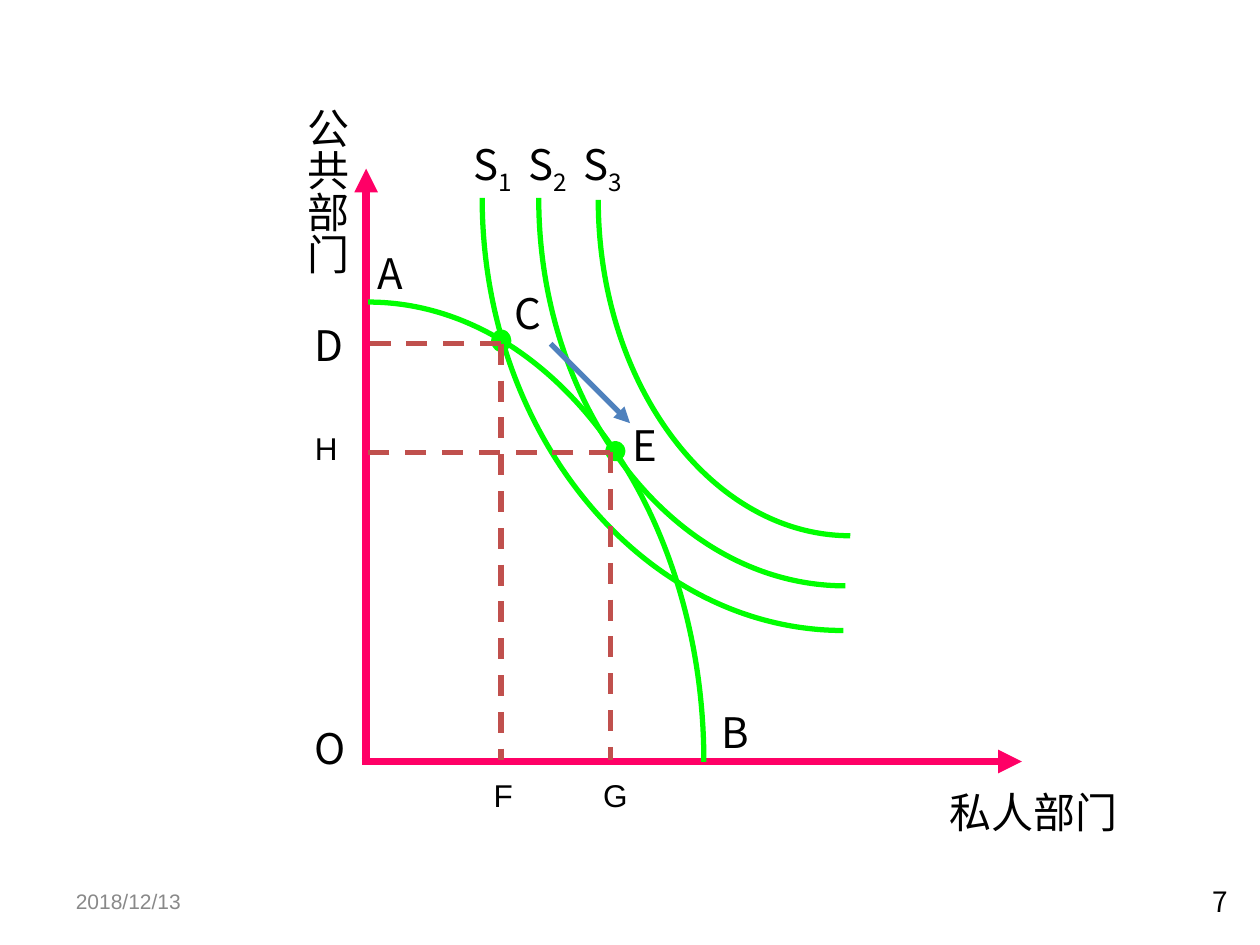
from lxml import etree
from pptx import Presentation
from pptx.dml.color import RGBColor
from pptx.enum.dml import MSO_LINE
from pptx.enum.shapes import MSO_CONNECTOR, MSO_SHAPE
from pptx.enum.text import MSO_ANCHOR, MSO_AUTO_SIZE, PP_ALIGN
from pptx.oxml.ns import qn
from pptx.util import Cm, Pt

DASH = MSO_LINE.DASH
STRAIGHT = MSO_CONNECTOR.STRAIGHT
OVAL = MSO_SHAPE.OVAL
MIDDLE = MSO_ANCHOR.MIDDLE
GROW = MSO_AUTO_SIZE.SHAPE_TO_FIT_TEXT
LEFT, RIGHT = PP_ALIGN.LEFT, PP_ALIGN.RIGHT

HUES = {"axis": "FF0066", "curve": "00FF00", "guide": "C0504D",
        "shift": "4F81BD", "text": "000000", "date": "898989"}
SANS, HAN = "Arial", "Noto Sans CJK SC"
BEND = 0.55


def color(name):
    return RGBColor.from_string(HUES[name])


def text(slide, words, x, y, w, h, size=24, font=HAN, hue="text", align=LEFT,
         wrap=False, grow=True, anchor=None, vert=None, tab=None):
    box = slide.shapes.add_textbox(Cm(x), Cm(y), Cm(w), Cm(h))
    frame = box.text_frame
    frame.word_wrap = wrap
    if grow:
        frame.auto_size = GROW
    if anchor is not None:
        frame.vertical_anchor = anchor
    if vert:
        frame._txBody.bodyPr.set("vert", vert)
    para = frame.paragraphs[0]
    para.alignment = align
    if tab:
        stops = etree.SubElement(para._p.get_or_add_pPr(), qn("a:tabLst"))
        for n in (1, 2):
            etree.SubElement(stops, qn("a:tab"), pos=str(Cm(tab * n)), algn="l")
    for n, part in enumerate(words.split("|")):
        run = para.add_run()
        run.text = part
        run.font.size = Pt(size)
        run.font.name = font
        run.font.color.rgb = color(hue)
        props = run._r.get_or_add_rPr()
        etree.SubElement(props, qn("a:ea"), typeface=font)
        if n % 2:
            props.set("baseline", "-25000")


def line(slide, start, end, hue, width=3, dash=None, arrow=False):
    link = slide.shapes.add_connector(
        STRAIGHT, *(Cm(v) for v in (*start, *end)))
    link.line.color.rgb = color(hue)
    link.line.width = Pt(width)
    if dash:
        link.line.dash_style = dash
    if arrow:
        etree.SubElement(link.line._get_or_add_ln(), qn("a:tailEnd"),
                         type="triangle")
    etree.SubElement(link._element.spPr, qn("a:effectLst"))


def curve(slide, x, y, w, h, turn=0):
    x, y, w, h = (Cm(v) for v in (x, y, w, h))
    form = slide.shapes.build_freeform(x, y)
    form.add_line_segments([(x + w, y + h)], close=False)
    shape = form.convert_to_shape()
    edge = next(shape._element.iter(qn("a:lnTo")))
    bow = etree.Element(qn("a:cubicBezTo"))
    for across, down in ((BEND, 0), (1, 1 - BEND), (1, 1)):
        etree.SubElement(bow, qn("a:pt"), x=str(round(w * across)),
                         y=str(round(h * down)))
    edge.getparent().replace(edge, bow)
    shape.rotation = turn
    shape.shadow.inherit = False
    shape.fill.background()
    shape.line.color.rgb = color("curve")
    shape.line.width = Pt(3)


def dot(slide, x, y, w, h):
    shape = slide.shapes.add_shape(OVAL, Cm(x), Cm(y), Cm(w), Cm(h))
    shape.shadow.inherit = False
    shape.fill.solid()
    shape.fill.fore_color.rgb = color("curve")
    shape.line.color.rgb = color("curve")
    shape.line.width = Pt(4.5)


def main():
    deck = Presentation()
    deck.slide_width, deck.slide_height = Cm(25.4), Cm(19.05)
    slide = deck.slides.add_slide(deck.slide_layouts[6])

    text(slide, "2018/12/13", 1.28, 17.65, 5.92, 1.02, size=12, font=SANS,
         hue="date", wrap=True, grow=False, anchor=MIDDLE)
    text(slide, "7", 18.19, 17.65, 6.81, 1.02, size=16, align=RIGHT,
         wrap=True, grow=False, anchor=MIDDLE)

    base = 15.35
    line(slide, (7.38, base), (7.38, 3.4), "axis", 4.5, arrow=True)
    line(slide, (7.29, base), (20.6, base), "axis", 4.5, arrow=True)

    for x, y, w, h in ((9.72, 3.99, 7.28, 8.72), (10.86, 3.99, 6.18, 7.82),
                       (12.06, 4.03, 5.08, 6.77)):
        curve(slide, x, y, w, h, turn=180)
    curve(slide, 7.42, 6.09, 6.77, 9.27)
    dot(slide, 12.28, 8.97, 0.25, 0.25)
    dot(slide, 9.98, 6.72, 0.25, 0.3)

    text(slide, "S|1|\tS|2|\tS|3", 9.3, 2.67, 4.04, 1.45, wrap=True, tab=1.11)
    for name, x, y, w in (("A", 7.37, 4.87, 1.07), ("C", 10.12, 5.67, 1.12),
                          ("E", 12.5, 8.33, 1.07), ("O", 6.1, 14.45, 1.17),
                          ("B", 14.3, 14.12, 1.07), ("D", 6.1, 6.32, 1.12)):
        text(slide, name, x, y, w, 1.27)
    line(slide, (11.1, 6.93), (12.7, 8.53), "shift", arrow=True)
    text(slide, "私人部门", 18.9, 15.74, 4.19, 1.27, wrap=True)
    text(slide, "公共部门", 5.71, 1.92, 1.52, 3.63, vert="eaVert")

    for x, y in ((10.1, 6.93), (12.3, 9.12)):
        line(slide, (x, y), (x, 15.32), "guide", dash=DASH)
        line(slide, (x, y), (7.29, y), "guide", dash=DASH)

    for name, x, y, w in (("F", 9.7, 15.52, 0.89), ("G", 11.91, 15.52, 0.99),
                          ("H", 6.1, 8.53, 0.97)):
        text(slide, name, x, y, w, 1.02, size=18, font=SANS)

    deck.save("out.pptx")


if __name__ == "__main__":
    main()
